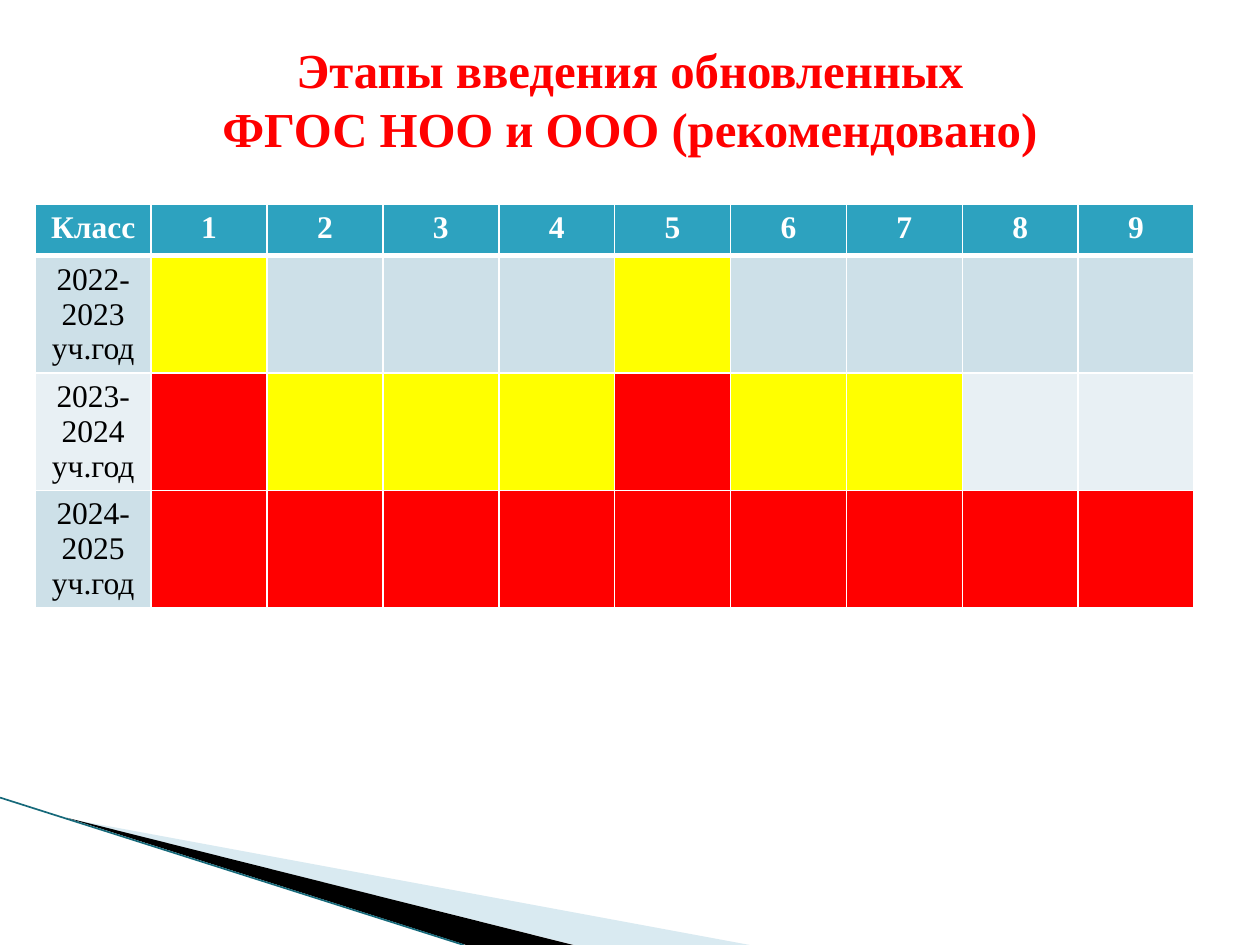
"""Build the slide on the stages of introducing the updated standards."""
from lxml import etree
from pptx import Presentation
from pptx import util as u
from pptx.dml.color import RGBColor
from pptx.enum import shapes, text
from pptx.oxml import ns

WHITE, TEAL, RED, YELLOW = "FFFFFF", "2DA2BF", "FF0000", "FFFF00"
BANDS = ["CDE0E8", "E8F0F4"]


def paint(fill, color):
    fill.solid()
    fill.fore_color.rgb = RGBColor.from_string(color)


def write(paragraph, words, color, **formats):
    paragraph.text = words
    paragraph.alignment = text.PP_ALIGN.CENTER
    paragraph.font.name = "Times New Roman"
    paragraph.font.color.rgb = RGBColor.from_string(color)
    for key, value in formats.items():
        setattr(paragraph.font, key, value)


deck = Presentation()
deck.slide_width, deck.slide_height = u.Inches(10), u.Inches(7.5)
slide = deck.slides.add_slide(deck.slide_layouts[6])

wedges = [
    ("A0CBDC", 40, [(0.55, 6.5), (5.95, 7.5), (4.56, 7.5)]),
    ("000000", 100, [(0.53, 6.49), (4.55, 7.5), (3.7, 7.5)]),
]
for color, opacity, points in wedges:
    corners = [(u.Inches(x), u.Inches(y)) for x, y in points]
    builder = slide.shapes.build_freeform(*corners[0])
    builder.add_line_segments(corners[1:], close=True)
    wedge = builder.convert_to_shape()
    wedge.shadow.inherit = False
    wedge.line.fill.background()
    paint(wedge.fill, color)
    if opacity < 100:
        tint = wedge.fill._xPr.find(".//" + ns.qn("a:srgbClr"))
        etree.SubElement(tint, ns.qn("a:alpha"), val=str(opacity * 1000))

edge = slide.shapes.add_connector(
    shapes.MSO_CONNECTOR.STRAIGHT,
    u.Inches(0), u.Inches(6.33), u.Inches(3.68), u.Inches(7.5))
paint(edge.line.fill, "16697A")
edge.line.width = u.Pt(0.95)
etree.SubElement(edge._element.spPr, ns.qn("a:effectLst"))

years = ["2022-2023 уч.год", "2023-2024\nуч.год", "2024-2025 уч.год"]
stages = ["Y...Y....", "RYYYRYY..", "RRRRRRRRR"]
headings = ["Класс", *map(str, range(1, 10))]
stage_colors = {"Y": YELLOW, "R": RED}

schedule = slide.shapes.add_table(
    4, 10, u.Inches(0.28), u.Inches(1.62), u.Inches(9.22), u.Inches(3.2)).table
for column in schedule.columns:
    column.width = u.Inches(0.92)
for i, row in enumerate(schedule.rows):
    row.height = u.Inches(0.93 if i else 0.41)
    for j, cell in enumerate(row.cells):
        borders = cell._tc.get_or_add_tcPr()
        for side in "LRTB":
            thick = (i, side) in [(0, "B"), (1, "T")]
            border = etree.SubElement(
                borders, ns.qn("a:ln" + side), w=str(u.Pt(3 if thick else 1)))
            line_fill = etree.SubElement(border, ns.qn("a:solidFill"))
            etree.SubElement(line_fill, ns.qn("a:srgbClr"), val=WHITE)
        if i == 0:
            paint(cell.fill, TEAL)
            write(cell.text_frame.paragraphs[0], headings[j], WHITE,
                  size=u.Pt(18), bold=True)
            continue
        band = BANDS[(i - 1) % 2]
        if j:
            paint(cell.fill, stage_colors.get(stages[i - 1][j - 1], band))
        else:
            paint(cell.fill, band)
            cell.text_frame.text = years[i - 1]
            for paragraph in cell.text_frame.paragraphs:
                write(paragraph, paragraph.text, "000000",
                      size=u.Pt(18), bold=False)

title = slide.shapes.add_textbox(
    u.Inches(0.5), u.Inches(0.31), u.Inches(9), u.Inches(0.95)).text_frame
title_format = {
    "word_wrap": True, "vertical_anchor": text.MSO_ANCHOR.TOP,
    "margin_top": 0, "margin_bottom": 0,
}
for key, value in title_format.items():
    setattr(title, key, value)
heading = title.paragraphs[0]
write(heading, "Этапы введения обновленных\vФГОС НОО и ООО (рекомендовано)", RED,
      size=u.Pt(27.9), bold=True)
heading.line_spacing = u.Pt(33.7)

deck.save("out.pptx")
